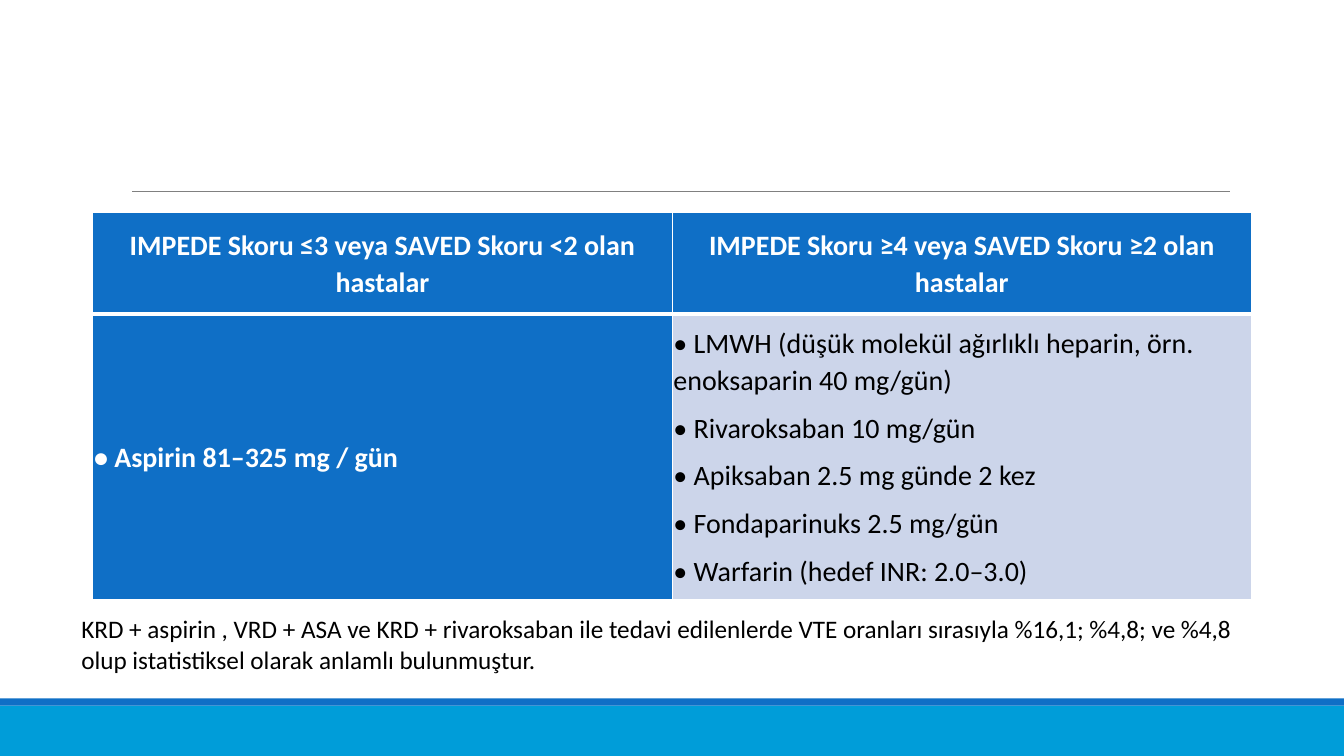
from dataclasses import dataclass

from lxml import etree
from pptx import Presentation
from pptx.dml.color import RGBColor
from pptx.enum import shapes, text
from pptx.oxml import ns
from pptx.util import Cm, Pt


@dataclass(frozen=True)
class Theme:
    font: str = "Calibri"
    table_size: int = 20
    note_size: int = 18
    blue: str = "0F6FC6"
    cyan: str = "009DD9"
    pale: str = "CCD5EA"
    grey: str = "808080"
    white: str = "FFFFFF"
    black: str = "000000"


theme = Theme()


def style_text(para, size, color, bold=False):
    for span in para.runs:
        span.font.name = theme.font
        span.font.size = Pt(size)
        span.font.bold = bold
        span.font.color.rgb = RGBColor.from_string(color)


def add_border(cell, side, width):
    properties = cell._tc.get_or_add_tcPr()
    line = etree.SubElement(properties, ns.qn(f"a:ln{side}"), w=str(Pt(width)))
    fill = etree.SubElement(line, ns.qn("a:solidFill"))
    etree.SubElement(fill, ns.qn("a:srgbClr"), val=theme.white)


deck = Presentation()
deck.slide_width, deck.slide_height = Cm(33.87), Cm(19.05)
page = deck.slides.add_slide(deck.slide_layouts[6])

# Footer bands
for top, height, color in [(17.78, 1.27, theme.cyan), (17.6, 0.18, theme.blue)]:
    band = page.shapes.add_shape(
        shapes.MSO_SHAPE.RECTANGLE, 0, Cm(top), deck.slide_width, Cm(height))
    band.shadow.inherit = False
    band.fill.solid()
    band.fill.fore_color.rgb = RGBColor.from_string(color)
    band.line.fill.background()

# Rule above the table
rule = page.shapes.add_connector(
    shapes.MSO_CONNECTOR.STRAIGHT, Cm(3.33), Cm(4.82), Cm(31), Cm(4.82))
rule.line.color.rgb = RGBColor.from_string(theme.grey)
rule.line.width = Pt(0.5)
etree.SubElement(rule._element.spPr, ns.qn("a:effectLst"))

# Treatment table: paragraphs, fill, text colour, bold, alignment
header = (theme.blue, theme.white, True, text.PP_ALIGN.CENTER)
first_column = (theme.blue, theme.white, True, text.PP_ALIGN.LEFT)
body = (theme.pale, theme.black, False, text.PP_ALIGN.LEFT)
rows = [
    [("IMPEDE Skoru ≤3 veya SAVED Skoru <2 olan hastalar", header),
     ("IMPEDE Skoru ≥4 veya SAVED Skoru ≥2 olan hastalar", header)],
    [("• Aspirin 81–325 mg / gün", first_column),
     ("• LMWH (düşük molekül ağırlıklı heparin, örn. enoksaparin 40 mg/gün)\n"
      "• Rivaroksaban 10 mg/gün\n"
      "• Apiksaban 2.5 mg günde 2 kez\n"
      "• Fondaparinuks 2.5 mg/gün\n"
      "• Warfarin (hedef INR: 2.0–3.0)", body)],
]
row_heights = [2.56, 7.18]
table = page.shapes.add_table(
    2, 2, Cm(2.34), Cm(5.36), Cm(29.2), Cm(sum(row_heights))).table
for column in table.columns:
    column.width = Cm(14.6)
for row_index, (row, height) in enumerate(zip(rows, row_heights)):
    table.rows[row_index].height = Cm(height)
    for column_index, (words, (fill, color, bold, align)) in enumerate(row):
        cell = table.cell(row_index, column_index)
        cell.margin_left = cell.margin_right = Cm(0.03)
        cell.margin_top = cell.margin_bottom = Cm(0.03)
        cell.vertical_anchor = text.MSO_ANCHOR.MIDDLE
        # The line between header and body is thicker
        top, bottom = (1, 3) if row_index == 0 else (3, 1)
        for side, width in zip("LRTB", (1, 1, top, bottom)):
            add_border(cell, side, width)
        cell.fill.solid()
        cell.fill.fore_color.rgb = RGBColor.from_string(fill)
        cell.text_frame.text = words
        for para in cell.text_frame.paragraphs:
            para.alignment = align
            para.line_spacing = 1.07
            para.space_after = Pt(8)
            style_text(para, theme.table_size, color, bold)

# Note below the table
note = page.shapes.add_textbox(Cm(1.8), Cm(15.34), Cm(30.07), Cm(1.8))
note.text_frame.word_wrap = True
note.text_frame.text = (
    "KRD + aspirin , VRD + ASA ve KRD + rivaroksaban ile tedavi edilenlerde "
    "VTE oranları sırasıyla %16,1; %4,8; ve %4,8 olup istatistiksel olarak "
    "anlamlı bulunmuştur.")
style_text(note.text_frame.paragraphs[0], theme.note_size, theme.black)

deck.save("out.pptx")
